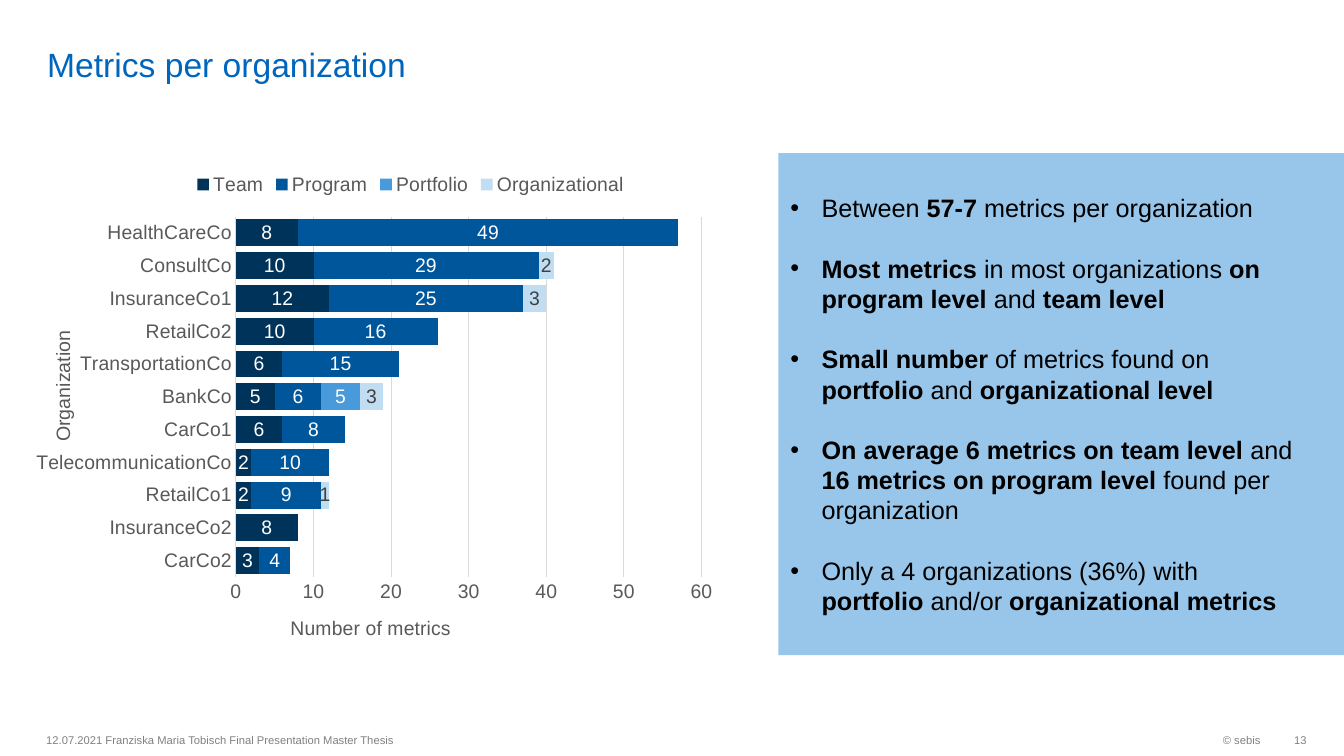
"""Build the slide on metrics per organization."""
import pptx
import pptx.chart.data
import pptx.dml.color
import pptx.enum.chart
import pptx.enum.shapes
import pptx.enum.text
import pptx.oxml
import pptx.oxml.ns
import pptx.util

WIDE, HIGH = 13.33, 7.5
COLS, ROWS = 133.3, 75
FACE = "Arial"
GREY = "595959"
PALE = "D9D9D9"
ALIGN = pptx.enum.text.PP_ALIGN
ANCHOR = pptx.enum.text.MSO_ANCHOR
CHART = pptx.enum.chart

NAMES = ["CarCo2", "InsuranceCo2", "RetailCo1", "TelecommunicationCo",
         "CarCo1", "BankCo", "TransportationCo", "RetailCo2",
         "InsuranceCo1", "ConsultCo", "HealthCareCo"]
NONE = None
LEVELS = [
    ("Team", "003359", "FFFFFF", [3, 8, 2, 2, 6, 5, 6, 10, 12, 10, 8]),
    ("Program", "00569B", "FFFFFF", [4, NONE, 9, 10, 8, 6, 15, 16, 25, 29, 49]),
    ("Portfolio", "489ADA", "FFFFFF", [NONE] * 5 + [5] + [NONE] * 5),
    ("Organizational", "C1DDF2", "404040",
     [NONE, NONE, 1, NONE, NONE, 3, NONE, NONE, 3, 2, NONE]),
]
POINTS = [
    "Between **57-7** metrics per organization",
    "**Most metrics** in most organizations **on program level** and **team level**",
    "**Small number** of metrics found on **portfolio** and **organizational level**",
    "**On average 6 metrics on team level** and **16 metrics on program level** "
    "found per organization",
    "Only a 4 organizations (36%) with **portfolio** and/or **organizational metrics**",
]


def color(code):
    """Turn a hex string into a color."""
    return pptx.dml.color.RGBColor.from_string(code)


def grid(left, top, wide, high):
    """Turn columns and rows of the grid into lengths."""
    col, row = WIDE / COLS, HIGH / ROWS
    return [pptx.util.Inches(n) for n in (left * col, top * row, wide * col, high * row)]


def apply(item, form):
    """Set each format value on an object."""
    for name, value in form.items():
        setattr(item, name, value)


def style(font, size, code, bold=False):
    """Set the face, size, weight and color of a font."""
    apply(font, {"name": FACE, "size": pptx.util.Pt(size), "bold": bold})
    font.color.rgb = color(code)


def node(tag, **attrs):
    """Make an XML element from a prefixed tag."""
    item = pptx.oxml.parse_xml(f"<{tag} {pptx.oxml.ns.nsdecls(tag.split(':')[0])}/>")
    for name, value in attrs.items():
        item.set(name, str(value))
    return item


def panel(slide, place, code):
    """Draw a plain filled block."""
    block = slide.shapes.add_shape(pptx.enum.shapes.MSO_SHAPE.RECTANGLE, *grid(*place))
    block.shadow.inherit = False
    block.fill.solid()
    block.fill.fore_color.rgb = color(code)
    block.line.fill.background()


def frame(slide, place, **form):
    """Add a wrapping text box and return its frame."""
    body = slide.shapes.add_textbox(*grid(*place)).text_frame
    apply(body, {"word_wrap": True, **form})
    return body


def label(slide, place, text, size, code, align=ALIGN.LEFT, **form):
    """Add one line of text."""
    para = frame(slide, place, **form).paragraphs[0]
    para.alignment = align
    run = para.add_run()
    run.text = text
    style(run.font, size, code)


def bullets(slide, place, points, size):
    """Add a bullet list with bold parts between double stars."""
    body = frame(slide, place)
    for spot, point in enumerate(points):
        para = body.add_paragraph() if spot else body.paragraphs[0]
        inset = pptx.util.Inches(0.31)
        props = para._p.get_or_add_pPr()
        para.space_before = pptx.util.Pt(21.6 if spot else 0)
        props.set("marL", str(inset))
        props.set("indent", str(-inset))
        props.append(node("a:buFont", typeface=FACE))
        props.append(node("a:buChar", char="•"))
        for turn, part in enumerate(point.split("**")):
            if part:
                run = para.add_run()
                run.text = part
                style(run.font, size, "000000", turn % 2 == 1)


def layout(parent, **shares):
    """Make a manual chart layout from shares of its size."""
    outer = node("c:layout")
    inner = node("c:manualLayout")
    outer.append(inner)
    for name, value in shares.items():
        inner.append(node(f"c:{name}", val=value))
    for old in parent.findall(pptx.oxml.ns.qn("c:layout")):
        parent.remove(old)
    return outer


def axis(item, text, left, top):
    """Style an axis and place its title."""
    apply(item, {"major_tick_mark": CHART.XL_TICK_MARK.NONE,
                 "minor_tick_mark": CHART.XL_TICK_MARK.NONE})
    style(item.tick_labels.font, 14, GREY)
    title = item.axis_title
    run = title.text_frame.paragraphs[0].add_run()
    run.text = text
    style(run.font, 14, GREY)
    root = title._element
    place = layout(root, xMode="edge", yMode="edge", x=left, y=top)
    root.find(pptx.oxml.ns.qn("c:tx")).addnext(place)


def stroke(line):
    """Draw a thin pale line."""
    line.color.rgb = color(PALE)
    line.width = pptx.util.Pt(0.75)


def bars(slide, place):
    """Add the stacked bar chart of metrics."""
    data = pptx.chart.data.CategoryChartData()
    data.categories = NAMES
    for name, _, _, values in LEVELS:
        data.add_series(name, values)
    chart = slide.shapes.add_chart(
        CHART.XL_CHART_TYPE.BAR_STACKED, *grid(*place), data).chart
    apply(chart, {"has_title": False, "has_legend": True})
    style(chart.font, 14, "000000")
    apply(chart.legend, {"position": CHART.XL_LEGEND_POSITION.TOP,
                         "include_in_layout": False})
    style(chart.legend.font, 14, GREY)

    axis(chart.category_axis, "Organization", 0, 0.33)
    stroke(chart.category_axis.format.line)
    axis(chart.value_axis, "Number of metrics", 0.33, 0.91)
    apply(chart.value_axis, {"minimum_scale": 0, "maximum_scale": 60, "major_unit": 10})
    chart.value_axis.format.line.fill.background()
    stroke(chart.value_axis.major_gridlines.format.line)

    plot = chart.plots[0]
    apply(plot, {"gap_width": 22, "overlap": 100, "vary_by_categories": False})
    for level, (_, fill, ink, _) in zip(plot.series, LEVELS):
        level.format.fill.solid()
        level.format.fill.fore_color.rgb = color(fill)
        apply(level.data_labels, {"show_value": True,
                                  "position": CHART.XL_LABEL_POSITION.CENTER})
        style(level.data_labels.font, 14, ink)
    area = chart._chartSpace.chart.plotArea
    area.insert(0, layout(area, layoutTarget="inner", xMode="edge", yMode="edge",
                          x=0.26, y=0.11, w=0.64, h=0.73))


def main():
    """Build and save the slide."""
    deck = pptx.Presentation()
    apply(deck, {"slide_width": pptx.util.Inches(WIDE),
                 "slide_height": pptx.util.Inches(HIGH)})
    slide = deck.slides.add_slide(deck.slide_layouts[6])
    panel(slide, (77.2, 15.2, COLS - 77.2, 49.8), "98C6EA")
    label(slide, (3.7, 0.5, 115.8, 7.9), "Metrics per organization", 24, "0065BD",
          vertical_anchor=ANCHOR.BOTTOM, margin_top=0, margin_bottom=0)
    foot = {"size": 8, "code": "808080", "vertical_anchor": ANCHOR.MIDDLE}
    label(slide, (3.6, 71.8, 63, 3.2),
          "12.07.2021 Franziska Maria Tobisch Final Presentation Master Thesis", **foot)
    label(slide, (102.6, 71.8, 23.4, 3.2), "© sebis", align=ALIGN.RIGHT, **foot)
    label(slide, (126, 71.8, 3.6, 3.2), "13", align=ALIGN.RIGHT, margin_right=0, **foot)
    bars(slide, (3.6, 16.1, 73.2, 49))
    bullets(slide, (77.4, 18.6, 52.8, 43.4), POINTS, 18)
    deck.save("out.pptx")


if __name__ == "__main__":
    main()
